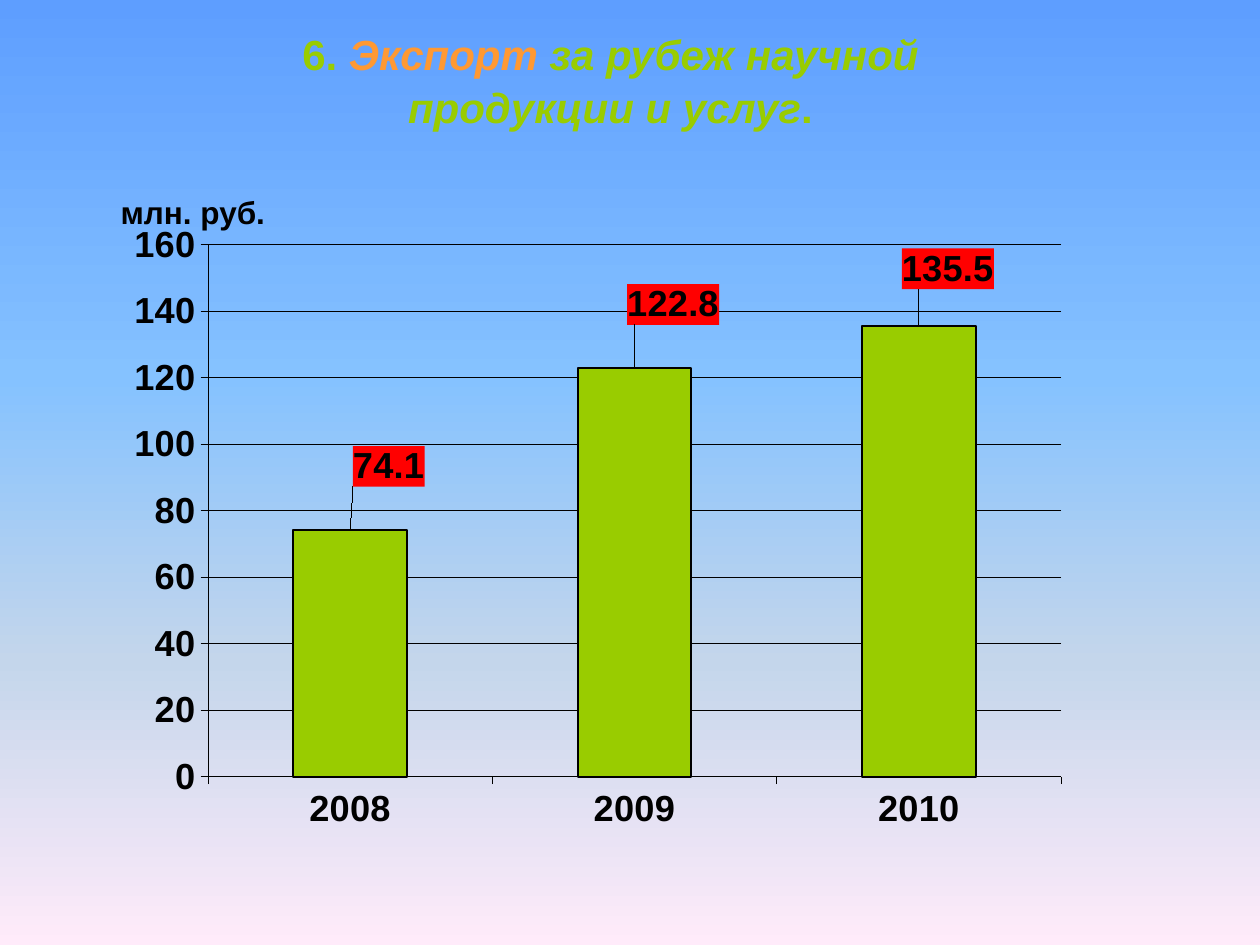
from lxml import etree
from pptx import Presentation
from pptx.chart.data import CategoryChartData
from pptx.dml.color import RGBColor
from pptx.enum import chart as chart_enum, text
from pptx.oxml import parse_xml
from pptx.oxml.ns import nsdecls, qn
from pptx.util import Inches, Pt

GREEN = RGBColor(0x99, 0xCC, 0x00)
ORANGE = RGBColor(0xFF, 0x99, 0x33)
RED = RGBColor(0xFF, 0x00, 0x00)
BLACK = RGBColor(0x00, 0x00, 0x00)
SKY_STOPS = [
    (0, RGBColor(0x5E, 0x9E, 0xFF)),
    (40, RGBColor(0x85, 0xC2, 0xFF)),
    (70, RGBColor(0xC4, 0xD6, 0xEB)),
    (100, RGBColor(0xFF, 0xEB, 0xFA)),
]


def set_font(font, size, color=BLACK):
    font.name = "Arial"
    font.size = Pt(size)
    font.bold = True
    font.color.rgb = color


def manual_layout(**settings):
    items = "".join(f'<c:{name} val="{value}"/>' for name, value in settings.items())
    return parse_xml(f'<c:layout {nsdecls("c")}><c:manualLayout>{items}</c:manualLayout></c:layout>')


presentation = Presentation()
presentation.slide_width = Inches(10)
presentation.slide_height = Inches(7.5)
slide = presentation.slides.add_slide(presentation.slide_layouts[5])

# Background gradient, top to bottom
background = slide.background.fill
background.gradient()
background.gradient_angle = 270
stop_list = slide.element.find(".//" + qn("a:gsLst"))
for stop in list(stop_list):
    stop_list.remove(stop)
for position, color in SKY_STOPS:
    stop = etree.SubElement(stop_list, qn("a:gs"), pos=str(position * 1000))
    etree.SubElement(stop, qn("a:srgbClr"), val=str(color))

# Column chart
data = CategoryChartData(number_format="0.0")
data.categories = ["2008", "2009", "2010"]
data.add_series("Series 1", [74.1, 122.8, 135.5])
chart = slide.shapes.add_chart(
    chart_enum.XL_CHART_TYPE.COLUMN_CLUSTERED,
    Inches(0.9), Inches(1.78), Inches(7.66), Inches(5.11), data).chart
chart.has_legend = False
chart.has_title = False
set_font(chart.font, 20.7)

plot = chart.plots[0]
plot.gap_width = 150
plot.vary_by_categories = False
plot_area = chart.element.find(".//" + qn("c:plotArea"))
for layout in plot_area.findall(qn("c:layout")):
    plot_area.remove(layout)
plot_area.insert(0, manual_layout(
    layoutTarget="inner", xMode="edge", yMode="edge", x=0.098, y=0.031, w=0.884, h=0.827))

# Axes
chart.value_axis.minimum_scale = 0
chart.value_axis.maximum_scale = 160
chart.value_axis.major_unit = 20
chart.value_axis.has_major_gridlines = True
chart.value_axis.tick_labels.number_format = "0"
chart.value_axis.tick_labels.number_format_is_linked = False
chart.category_axis.tick_label_position = chart_enum.XL_TICK_LABEL_POSITION.LOW
for axis in (chart.category_axis, chart.value_axis):
    axis.major_tick_mark = chart_enum.XL_TICK_MARK.OUTSIDE
    set_font(axis.tick_labels.font, 20.7)
for line in (chart.category_axis.format.line, chart.value_axis.format.line,
             chart.value_axis.major_gridlines.format.line):
    line.color.rgb = BLACK
    line.width = Pt(0.29)

# Columns
series = plot.series[0]
series.format.fill.solid()
series.format.fill.fore_color.rgb = GREEN
series.format.line.color.rgb = BLACK
series.format.line.width = Pt(1.15)

# Value labels on red, shifted from their columns
labels = series.data_labels
labels.show_value = True
labels.number_format = "0.0"
labels.number_format_is_linked = False
labels.position = chart_enum.XL_LABEL_POSITION.OUTSIDE_END
set_font(labels.font, 20.7)
for index, (x, y) in enumerate([(0.04, -0.06), (0.04, -0.06), (0.03, -0.05)]):
    label = series.points[index].data_label
    set_font(label.font, 20.7)
    label.position = chart_enum.XL_LABEL_POSITION.OUTSIDE_END
    element = labels._element.findall(qn("c:dLbl"))[index]
    element.find(qn("c:idx")).addnext(manual_layout(x=x, y=y))
    element.find(qn("c:txPr")).addprevious(parse_xml(
        f'<c:spPr {nsdecls("c", "a")}><a:solidFill><a:srgbClr val="{RED}"/></a:solidFill></c:spPr>'))

# Unit of the value axis
unit_box = slide.shapes.add_textbox(Inches(0.86), Inches(1.48), Inches(1.53), Inches(0.4))
unit_box.text_frame.word_wrap = True
paragraph = unit_box.text_frame.paragraphs[0]
paragraph.text = "млн. руб."
set_font(paragraph.font, 18)

# Title
title = slide.shapes.title
title.left, title.top = Inches(1.72), Inches(0.16)
title.width, title.height = Inches(6.25), Inches(0.91)
title.text_frame.vertical_anchor = text.MSO_ANCHOR.TOP
title.text_frame.auto_size = text.MSO_AUTO_SIZE.NONE
paragraph = title.text_frame.paragraphs[0]
paragraph.alignment = text.PP_ALIGN.CENTER
paragraph.line_spacing = 1.05
for wording, color, italic in [
    ("6. ", GREEN, False),
    ("Экспорт", ORANGE, True),
    (" за рубеж научной продукции и услуг", GREEN, True),
    (".", GREEN, False),
]:
    run = paragraph.add_run()
    run.text = wording
    set_font(run.font, 24, color)
    run.font.italic = italic

presentation.save("out.pptx")
